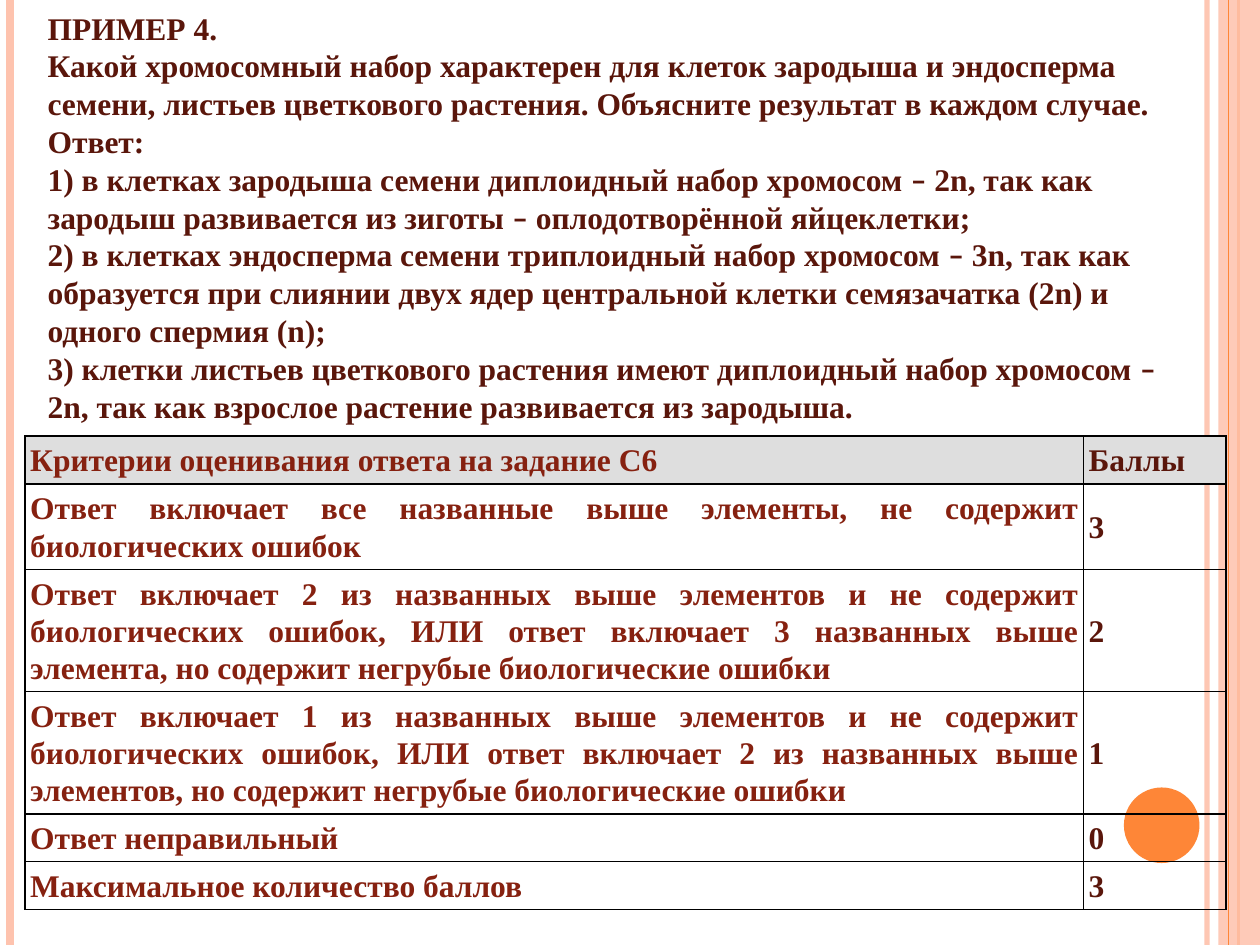
"""Build a slide with a worked biology answer and its marking table."""
from lxml import etree
from pptx import Presentation
from pptx.dml.color import RGBColor
from pptx.enum.shapes import MSO_CONNECTOR, MSO_SHAPE
from pptx.enum.text import MSO_ANCHOR, PP_ALIGN
from pptx.oxml.ns import qn
from pptx.util import Inches, Pt

STRAIGHT = MSO_CONNECTOR.STRAIGHT
RECTANGLE, OVAL = MSO_SHAPE.RECTANGLE, MSO_SHAPE.OVAL
TOP, MIDDLE = MSO_ANCHOR.TOP, MSO_ANCHOR.MIDDLE
JUSTIFY = PP_ALIGN.JUSTIFY

PEACH = RGBColor(0xFE, 0xC3, 0xAE)
ORANGE = RGBColor(0xFE, 0x86, 0x37)
GRAY = RGBColor(0xDE, 0xDE, 0xDE)
RED = RGBColor(0x86, 0x21, 0x10)
MAROON = RGBColor(0x5A, 0x16, 0x0B)

SERIF, DASH_FONT = "Times New Roman", "Calibri"

ANSWER = [
    ["ПРИМЕР 4.",
     "Какой хромосомный набор характерен для клеток зародыша и эндосперма семени, "
     "листьев цветкового растения. Объясните результат в каждом случае.",
     "Ответ:"],
    ["1) в клетках зародыша семени диплоидный набор хромосом – 2n, так как зародыш "
     "развивается из зиготы – оплодотворённой яйцеклетки; ",
     "2) в клетках эндосперма семени триплоидный набор хромосом – 3n, так как образуется "
     "при слиянии двух ядер центральной клетки семязачатка (2n) и одного спермия (n); ",
     "3) клетки листьев цветкового растения имеют диплоидный набор хромосом – 2n, "
     "так как взрослое растение развивается из зародыша."],
]

CRITERIA = [
    ("Критерии оценивания ответа на задание С6", "Баллы", 0.38),
    ("Ответ включает все названные выше элементы, не содержит биологических ошибок",
     "3", 0.68),
    ("Ответ включает 2 из названных выше элементов и не содержит биологических ошибок, "
     "ИЛИ ответ включает 3 названных выше элемента, но содержит негрубые "
     "биологические ошибки", "2", 0.97),
    ("Ответ включает 1 из названных выше элементов и не содержит биологических ошибок, "
     "ИЛИ ответ включает 2 из названных выше элементов, но содержит негрубые "
     "биологические ошибки", "1", 0.97),
    ("Ответ неправильный", "0", 0.38),
    ("Максимальное количество баллов", "3", 0.38),
]


def add_text(p, text, color=MAROON, font=SERIF, size=18):
    r = p.add_run()
    r.text = text
    r.font.name = font
    r.font.size = Pt(size)
    r.font.bold = True
    r.font.color.rgb = color


def set_alpha(element, percent):
    clr = next(element.iter(qn("a:srgbClr")))
    etree.SubElement(clr, qn("a:alpha"), val=str(percent * 1000))


prs = Presentation()
prs.slide_width, prs.slide_height = Inches(10), Inches(7.5)
s = prs.slides.add_slide(prs.slide_layouts[6])

stripes = []
for x, color, width in [(9.58, PEACH, 3), (0.08, PEACH, 4.5),
                        (9.83, ORANGE, 1.5), (9.75, ORANGE, 0.75)]:
    line = s.shapes.add_connector(STRAIGHT, Inches(x), 0, Inches(x), Inches(7.5))
    line.line.color.rgb = color
    line.line.width = Pt(width)
    etree.SubElement(line._element.spPr, qn("a:effectLst"))
    stripes.append(line)
set_alpha(stripes[0]._element.spPr, 93)

for kind, left, top, width, height, color in [
        (RECTANGLE, 9.67, 0, 0.33, 7.5, PEACH), (OVAL, 8.92, 6.25, 0.6, 0.6, ORANGE)]:
    sp = s.shapes.add_shape(kind, Inches(left), Inches(top), Inches(width), Inches(height))
    sp.shadow.inherit = False
    sp.fill.solid()
    sp.fill.fore_color.rgb = color
    sp.line.fill.background()
    if kind == RECTANGLE:
        set_alpha(sp._element.spPr, 87)
        stripes[-1]._element.addprevious(sp._element)

table = s.shapes.add_table(len(CRITERIA), 2, Inches(0.2), Inches(3.46),
                           Inches(9.53), Inches(3.76)).table
table.horz_banding = False
table.columns[0].width, table.columns[1].width = Inches(8.4), Inches(1.13)
for i, (criterion, points, height) in enumerate(CRITERIA):
    table.rows[i].height = Inches(height)
    for j, (text, color) in enumerate([(criterion, RED), (points, MAROON)]):
        cell = table.cell(i, j)
        cell.vertical_anchor = MIDDLE
        cell.margin_left = cell.margin_right = Inches(0.04)
        cell.margin_top = cell.margin_bottom = Inches(0.04)
        p = cell.text_frame.paragraphs[0]
        p.alignment = JUSTIFY
        p.line_spacing = 1.07
        p.space_before = Pt(3.8 if i else 0)
        add_text(p, text, color=color)
        tcPr = cell._tc.get_or_add_tcPr()
        for side in ("a:lnL", "a:lnR", "a:lnT", "a:lnB"):
            ln = etree.SubElement(tcPr, qn(side), w=str(Pt(1)))
            fill = etree.SubElement(ln, qn("a:solidFill"))
            etree.SubElement(fill, qn("a:srgbClr"), val="000000")
        if i == 0:
            cell.fill.solid()
            cell.fill.fore_color.rgb = GRAY
        else:
            cell.fill.background()

sp = s.shapes.add_textbox(Inches(0.28), Inches(0.02), Inches(9.37), Inches(3.74))
tf = sp.text_frame
tf.word_wrap = True
tf.vertical_anchor = TOP
for i, lines in enumerate(ANSWER):
    p = tf.add_paragraph() if i else tf.paragraphs[0]
    for j, text in enumerate(lines):
        if j:
            p.add_line_break()
        for k, part in enumerate(text.split("–")):
            if k:
                add_text(p, "–", font=DASH_FONT)
            add_text(p, part)

prs.save("out.pptx")
